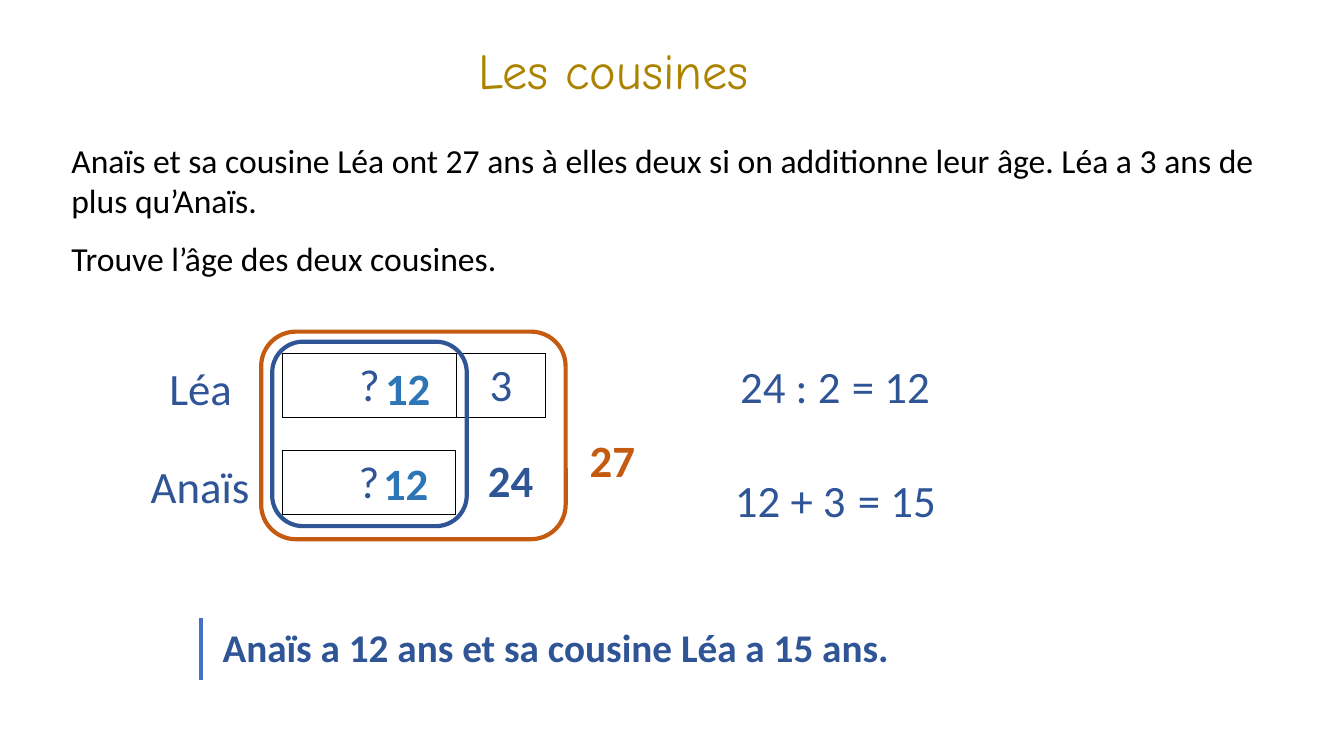
from lxml.etree import SubElement
from pptx import Presentation
from pptx.dml.color import RGBColor
from pptx.enum.shapes import MSO_CONNECTOR as Connector, MSO_SHAPE as Shape
from pptx.enum.text import MSO_ANCHOR as Anchor, PP_ALIGN as Align
from pptx.oxml import parse_xml
from pptx.oxml.ns import nsdecls, qn
from pptx.util import Inches, Pt

BLACK = RGBColor(0x00, 0x00, 0x00)
WHITE = RGBColor(0xFF, 0xFF, 0xFF)
GOLD = RGBColor(0xAC, 0x83, 0x00)
NAVY = RGBColor(0x2F, 0x55, 0x97)
BLUE = RGBColor(0x2E, 0x75, 0xB6)
RULE_BLUE = RGBColor(0x44, 0x72, 0xC4)
ORANGE = RGBColor(0xC5, 0x5A, 0x11)


def write(frame, *lines, size=32, font="Calibri", color=NAVY, bold=False,
          align=Align.CENTER, after=0, spacing=1.0):
    frame.word_wrap = True
    for index, line in enumerate(lines):
        para = frame.paragraphs[0] if index == 0 else frame.add_paragraph()
        para.alignment = align
        para.space_after = Pt(after)
        para.line_spacing = spacing
        span = para.add_run()
        span.text = line
        span.font.size = Pt(size)
        span.font.name = font
        span.font.bold = bold
        span.font.color.rgb = color


def add_text(page, left, top, width, height, *lines, **style):
    box = page.shapes.add_textbox(Inches(left), Inches(top), Inches(width), Inches(height))
    write(box.text_frame, *lines, **style)


def add_title(page, text):
    title = page.shapes.title
    title.left, title.top = Inches(3.1), Inches(0.4)
    title.width, title.height = Inches(5.97), Inches(0.65)
    title.text_frame.vertical_anchor = Anchor.MIDDLE
    write(title.text_frame, text, size=36, font="Comic Neue", color=GOLD, spacing=0.9)


def outline_cell(cell):
    properties = cell._tc.get_or_add_tcPr()
    for position, side in enumerate(("lnL", "lnR", "lnT", "lnB")):
        properties.insert(position, parse_xml(
            f'<a:{side} {nsdecls("a")} w="{Pt(1)}"><a:solidFill>'
            f'<a:srgbClr val="{BLACK}"/></a:solidFill></a:{side}>'))


def add_bar(page, top, values, widths):
    table = page.shapes.add_table(1, len(values), Inches(2.8), Inches(top),
                                  Inches(sum(widths)), Inches(0.62)).table
    table.first_row = table.horz_banding = False
    for index, (value, width) in enumerate(zip(values, widths)):
        table.columns[index].width = Inches(width)
        cell = table.cell(0, index)
        cell.vertical_anchor = Anchor.MIDDLE
        cell.fill.solid()
        cell.fill.fore_color.rgb = WHITE
        outline_cell(cell)
        write(cell.text_frame, value)


def add_frame(page, left, top, width, height, color):
    frame = page.shapes.add_shape(Shape.ROUNDED_RECTANGLE, Inches(left), Inches(top),
                                  Inches(width), Inches(height))
    frame.shadow.inherit = False
    frame.fill.background()
    frame.line.color.rgb = color
    frame.line.width = Pt(3)


def add_rule(page, x, top, bottom):
    rule = page.shapes.add_connector(Connector.STRAIGHT, Inches(x), Inches(top),
                                     Inches(x), Inches(bottom))
    rule.line.color.rgb = RULE_BLUE
    rule.line.width = Pt(3)
    SubElement(rule._element.spPr, qn("a:effectLst"))


def main():
    deck = Presentation()
    deck.slide_width, deck.slide_height = Inches(13.33), Inches(7.5)
    page = deck.slides.add_slide(deck.slide_layouts[5])

    add_title(page, "Les cousines")
    add_text(page, 0.61, 1.34, 12, 1.48,
             "Anaïs et sa cousine Léa ont 27 ans à elles deux si on additionne leur âge. "
             "Léa a 3 ans de plus qu’Anaïs.",
             "Trouve l’âge des deux cousines.",
             size=24, color=BLACK, align=Align.LEFT, after=12)

    add_bar(page, 3.51, ["?", "3"], [1.73, 0.88])
    add_bar(page, 4.47, ["?"], [1.72])
    add_frame(page, 2.59, 3.29, 3.02, 2.06, ORANGE)
    add_frame(page, 2.7, 3.39, 1.93, 1.83, NAVY)

    for text, left, top, width in (
        ("Léa", 1.39, 3.53, 1.2),
        ("Anaïs", 1.26, 4.5, 1.45),
        ("24 : 2", 7.06, 3.51, 1.56),
        ("= 12", 8.19, 3.51, 1.29),
        ("12 + 3", 7.06, 4.64, 1.56),
        ("= 15", 8.25, 4.64, 1.29),
    ):
        add_text(page, left, top, width, 0.64, text)

    for text, left, top, color in (
        ("27", 5.61, 4.24, ORANGE),
        ("24", 4.6, 4.44, NAVY),
        ("12", 3.58, 3.53, BLUE),
        ("12", 3.56, 4.47, BLUE),
    ):
        add_text(page, left, top, 0.93, 0.64, text, color=color, bold=True)

    add_rule(page, 1.99, 6.13, 6.75)
    add_text(page, 2.11, 6.13, 7.37, 0.57, "Anaïs a 12 ans et sa cousine Léa a 15 ans.",
             size=28, bold=True, align=Align.LEFT)
    deck.save("out.pptx")


if __name__ == "__main__":
    main()
